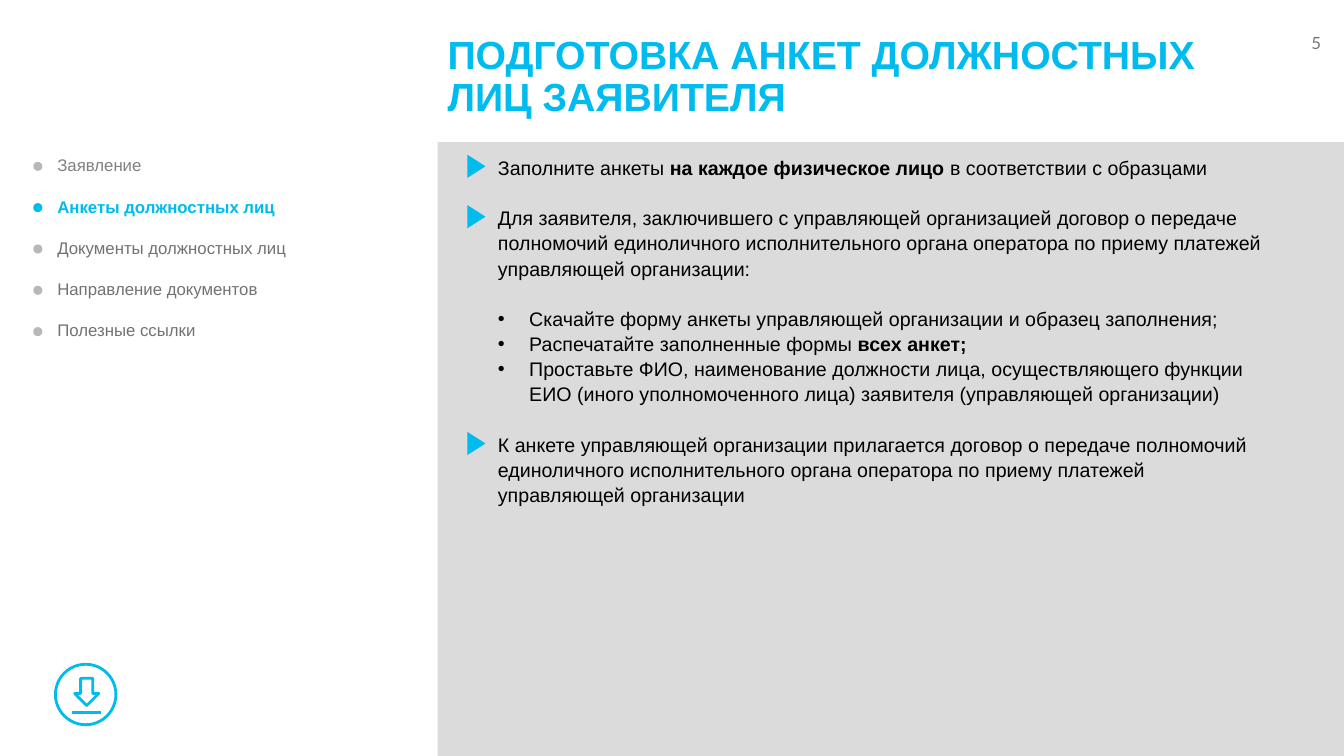
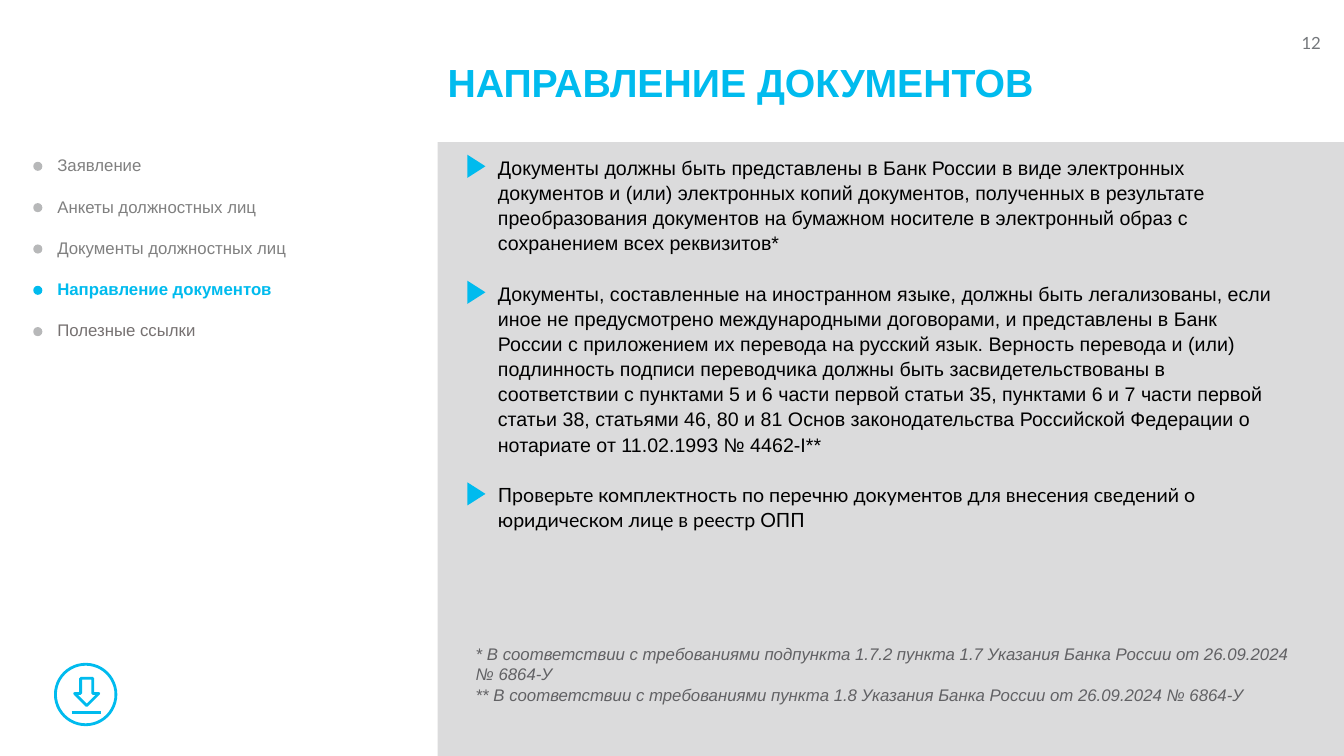
import pptx
import pptx.util
import pptx.dml.color
import pptx.enum.shapes
import pptx.enum.text
from lxml import etree
from pptx.oxml.ns import qn

Inches, Pt = pptx.util.Inches, pptx.util.Pt
SHAPE = pptx.enum.shapes.MSO_SHAPE
ALIGN = pptx.enum.text.PP_ALIGN
ANCHOR = pptx.enum.text.MSO_ANCHOR

# Content: each body entry is (kind, printed lines, font, runs); a run is (text, bold)
MENU = ["Заявление", "Анкеты должностных лиц", "Документы должностных лиц",
        "Направление документов", "Полезные ссылки"]
SLIDES = [
    {"number": 5, "active": 1, "title_middle": 0.77, "body_width": 8.28,
     "title": "ПОДГОТОВКА АНКЕТ ДОЛЖНОСТНЫХ ЛИЦ ЗАЯВИТЕЛЯ",
     "body": [
         ("step", 1, "Arial", [("Заполните анкеты ", False), ("на каждое физическое лицо ", True),
                               ("в соответствии с образцами", False)]),
         ("step", 3, "Arial", [("Для заявителя, заключившего с управляющей организацией договор о передаче "
                                "полномочий единоличного исполнительного органа оператора по приему платежей "
                                "управляющей организации:", False)]),
         ("bullet", 1, "Arial", [("Скачайте форму анкеты управляющей организации и образец заполнения;", False)]),
         ("bullet", 1, "Arial", [("Распечатайте заполненные формы ", False), ("всех анкет;", True)]),
         ("bullet", 2, "Arial", [("Проставьте ФИО, наименование должности лица, осуществляющего функции ЕИО "
                                  "(иного уполномоченного лица) заявителя (управляющей организации)", False)]),
         ("step", 3, "Arial", [("К анкете управляющей организации прилагается договор о передаче полномочий "
                                "единоличного исполнительного органа оператора по приему платежей "
                                "управляющей организации", False)])],
     "notes": []},
    {"number": 12, "active": 3, "title_middle": 0.84, "body_width": 8.5,
     "title": "НАПРАВЛЕНИЕ ДОКУМЕНТОВ",
     "body": [
         ("step", 4, "Arial", [("Документы должны быть представлены в Банк России в виде электронных документов "
                                "и (или) электронных копий документов, полученных в результате преобразования "
                                "документов на бумажном носителе в электронный образ с сохранением всех "
                                "реквизитов*", False)]),
         ("step", 7, "Arial", [("Документы, составленные на иностранном языке, должны быть легализованы, если "
                                "иное не предусмотрено международными договорами, и представлены в Банк России "
                                "с приложением их перевода на русский язык. Верность перевода и (или) "
                                "подлинность подписи переводчика должны быть засвидетельствованы в "
                                "соответствии с пунктами 5 и 6 части первой статьи 35, пунктами 6 и 7 части "
                                "первой статьи 38, статьями 46, 80 и 81 Основ законодательства Российской "
                                "Федерации о нотариате от 11.02.1993 № 4462-I**", False)]),
         ("step", 2, "Lato", [("Проверьте комплектность по перечню документов для внесения сведений о "
                               "юридическом лице в реестр ОПП", False)])],
     "notes": ["* В соответствии с требованиями подпункта 1.7.2 пункта 1.7 Указания Банка России "
               "от 26.09.2024 № 6864-У",
               "** В соответствии с требованиями пункта 1.8 Указания Банка России от 26.09.2024 № 6864-У"]},
]

# Shared look
COLORS = {"accent": "00BBEE", "panel": "DBDBDC", "dot": "B7B8B9", "number": "74777B", "text": "000000",
          "before": "808080", "after": "767171", "note": "616164"}
STYLES = {
    "title": {"size": Pt(28), "name": "Arial", "bold": True},
    "number": {"size": Pt(12), "name": "Lato"},
    "menu": {"size": Pt(12), "name": "Arial"},
    "body": {"size": Pt(14)},
    "note": {"size": Pt(12), "name": "Arial", "italic": True},
}
INDENTS = {"step": (0.5, 0), "bullet": (0.81, -0.31)}
WIDTH, HEIGHT = 13.33, 7.5
PANEL_LEFT, PANEL_TOP = 4.34, 1.41
FIRST_ROW = 1.65       # middle of the first line in both columns
LINE_PITCH, MENU_PITCH = 0.25, 0.41


def set_color(target, color):
    target.rgb = pptx.dml.color.RGBColor.from_string(COLORS[color])


def add_shape(page, kind, box, fill=None, line=None, rotation=0):
    shape = page.shapes.add_shape(kind, *map(Inches, box))
    shape.shadow.inherit = False
    shape.rotation = rotation
    if fill:
        shape.fill.solid()
        set_color(shape.fill.fore_color, fill)
    else:
        shape.fill.background()
    if line:
        shape.line.width = Pt(2)
        set_color(shape.line.color, line)
    else:
        shape.line.fill.background()


def add_box(page, box, anchor=ANCHOR.TOP):
    frame = page.shapes.add_textbox(*map(Inches, box)).text_frame
    frame.word_wrap = True
    frame.vertical_anchor = anchor
    return frame


def add_para(frame, index, **formats):
    para = frame.add_paragraph() if index else frame.paragraphs[0]
    for name, value in formats.items():
        setattr(para, name, value)
    return para


def add_span(para, text, style, color, **extra):
    span = para.add_run()
    span.text = text
    for name, value in {**STYLES[style], **extra}.items():
        setattr(span.font, name, value)
    set_color(span.font.color, color)


def add_menu(page, active):
    frame = add_box(page, (0.47, 1.49, 3.69, 1.95))
    for index, label in enumerate(MENU):
        current = index == active
        color = "accent" if current else "before" if index < active else "after"
        para = add_para(frame, index, space_after=Pt(15))
        add_span(para, label, "menu", color, bold=current)
        middle = FIRST_ROW + index * MENU_PITCH
        add_shape(page, SHAPE.OVAL, (0.33, middle - 0.045, 0.09, 0.09),
                  fill="accent" if current else "dot")


def add_body(page, entries, width):
    frame = add_box(page, (PANEL_LEFT, 1.48, width, 4.7))
    row, previous = 0, None
    for index, (kind, lines, font, runs) in enumerate(entries):
        # One empty row stands before every step and before a bullet list
        gap = index > 0 and (kind == "step" or kind != previous)
        row += gap
        para = add_para(frame, index, line_spacing=1.07)
        if gap:
            para.space_before = Pt(18)
        properties = para._p.get_or_add_pPr()
        for name, value in zip(("marL", "indent"), INDENTS[kind]):
            properties.set(name, str(Inches(value)))
        if kind == "bullet":
            etree.SubElement(properties, qn("a:buFont")).set("typeface", "Arial")
            etree.SubElement(properties, qn("a:buChar")).set("char", "•")
        else:
            add_shape(page, SHAPE.ISOSCELES_TRIANGLE,
                      (4.61, FIRST_ROW + row * LINE_PITCH - 0.09, 0.23, 0.18), fill="accent", rotation=90)
        for text, bold in runs:
            add_span(para, text, "body", "text", name=font, bold=bold)
        row, previous = row + lines, kind


def add_download_icon(page):
    add_shape(page, SHAPE.OVAL, (0.55, 6.59, 0.6, 0.6), line="accent")
    add_shape(page, SHAPE.DOWN_ARROW, (0.74, 6.73, 0.24, 0.27), line="accent")
    ends = map(Inches, (0.71, 7.07, 1, 7.07))
    line = page.shapes.add_connector(pptx.enum.shapes.MSO_CONNECTOR.STRAIGHT, *ends)
    line.line.width = Pt(2)
    set_color(line.line.color, "accent")
    etree.SubElement(line._element.spPr, qn("a:effectLst"))


def add_page(deck, content):
    page = deck.slides.add_slide(deck.slide_layouts[6])
    # Page number, panel and title
    number = add_para(add_box(page, (10.78, 0.28, 2.42, 0.3)), 0, alignment=ALIGN.RIGHT)
    add_span(number, str(content["number"]), "number", "number")
    add_shape(page, SHAPE.RECTANGLE,
              (PANEL_LEFT, PANEL_TOP, WIDTH - PANEL_LEFT, HEIGHT - PANEL_TOP), fill="panel")
    title_box = (PANEL_LEFT, content["title_middle"] - 0.5, 8.49, 1)
    title = add_para(add_box(page, title_box, ANCHOR.MIDDLE), 0, line_spacing=0.9)
    add_span(title, content["title"], "title", "accent")
    # Columns and footnotes
    add_menu(page, content["active"])
    add_body(page, content["body"], content["body_width"])
    if content["notes"]:
        frame = add_box(page, (4.62, 6.34, 8.32, 0.71))
        for index, note in enumerate(content["notes"]):
            add_span(add_para(frame, index), note, "note", "note")
    add_download_icon(page)


def main():
    deck = pptx.Presentation()
    deck.slide_width, deck.slide_height = Inches(WIDTH), Inches(HEIGHT)
    for content in SLIDES:
        add_page(deck, content)
    deck.save("out.pptx")


if __name__ == "__main__":
    main()
